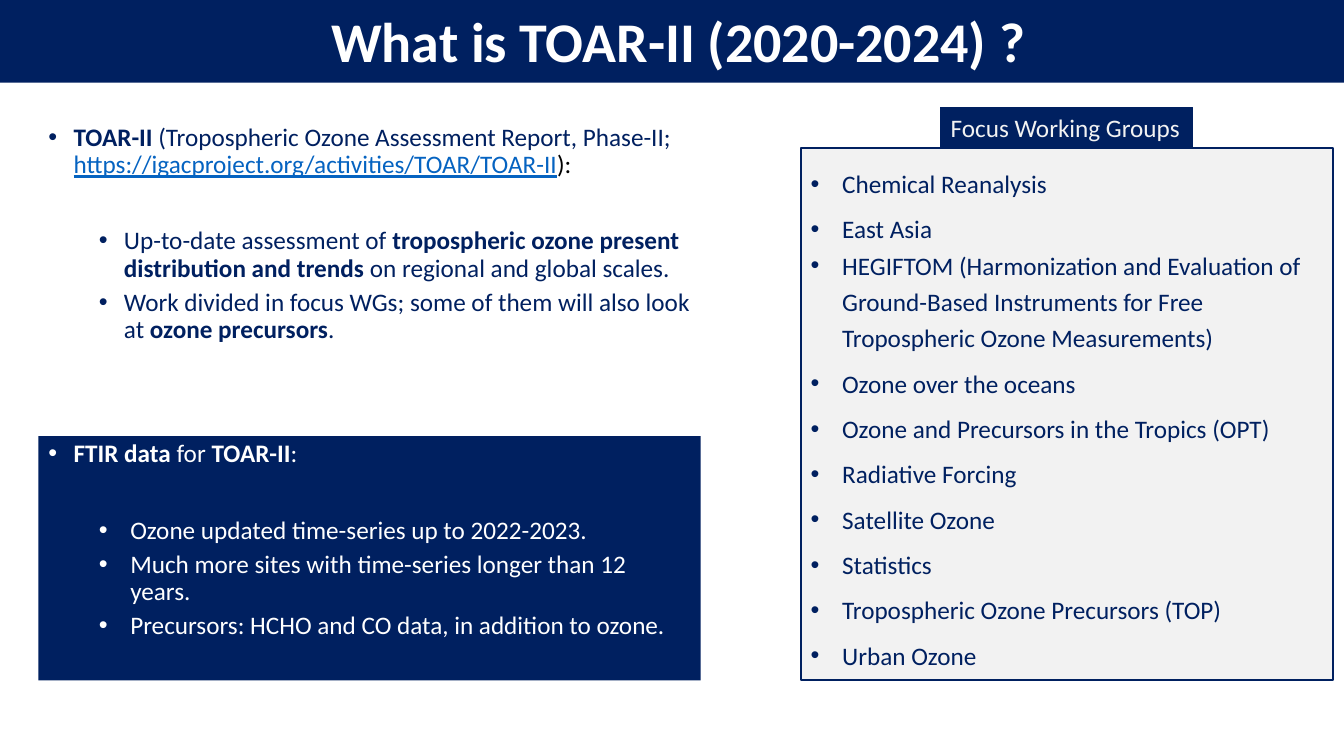
from dataclasses import dataclass

from lxml import etree
from pptx import Presentation
from pptx.dml.color import RGBColor
from pptx.enum.shapes import MSO_SHAPE
from pptx.enum.text import MSO_ANCHOR, PP_ALIGN
from pptx.oxml.ns import qn
from pptx.util import Pt

RECTANGLE = MSO_SHAPE.RECTANGLE
TOP, MIDDLE = MSO_ANCHOR.TOP, MSO_ANCHOR.MIDDLE
LEFT, CENTER = PP_ALIGN.LEFT, PP_ALIGN.CENTER


@dataclass(frozen=True)
class Theme:
    font: str = "Calibri"
    title_size: int = 40
    body_size: int = 18
    navy: str = "002060"
    white: str = "FFFFFF"
    grey: str = "F2F2F2"
    link: str = "0563C1"
    black: str = "000000"


THEME = Theme()
BOLD = {"bold": True}

TOAR_HEADING = [
    ("TOAR-II ", BOLD),
    "(Tropospheric Ozone Assessment Report, Phase-II; ",
    ("https://igacproject.org/activities/TOAR/TOAR-II",
     {"color": THEME.link, "underline": True}),
    ("):", {"color": THEME.black}),
]
TOAR_POINTS = [
    ["Up-to-date assessment of ",
     ("tropospheric ozone present distribution and trends", BOLD),
     " on regional and global scales."],
    ["Work divided in focus WGs; some of them will also look at ",
     ("ozone precursors", BOLD), "."],
]
FTIR_HEADING = [("FTIR data ", BOLD), "for ", ("TOAR-II", BOLD), ":"]
FTIR_POINTS = [
    ["Ozone updated time-series up to 2022-2023."],
    ["Much more sites with time-series longer than 12 years."],
    ["Precursors: HCHO and CO data, in addition to ozone."],
]
LONG_GROUP = ("HEGIFTOM (Harmonization and Evaluation of Ground-Based "
              "Instruments for Free Tropospheric Ozone Measurements)")
WORKING_GROUPS = [
    "Chemical Reanalysis", "East Asia", LONG_GROUP, "Ozone over the oceans",
    "Ozone and Precursors in the Tropics (OPT)", "Radiative Forcing",
    "Satellite Ozone", "Statistics", "Tropospheric Ozone Precursors (TOP)",
    "Urban Ozone",
]


def add_box(slide, left, top, width, height, fill, line=None, line_width=1.5,
            anchor=TOP, wrap=True):
    """Add a plain rectangle and return its text frame."""
    shape = slide.shapes.add_shape(
        RECTANGLE, Pt(left), Pt(top), Pt(width), Pt(height))
    shape.shadow.inherit = False
    shape.fill.solid()
    shape.fill.fore_color.rgb = RGBColor.from_string(fill)
    if line:
        shape.line.color.rgb = RGBColor.from_string(line)
        shape.line.width = Pt(line_width)
    else:
        shape.line.fill.background()
    frame = shape.text_frame
    frame.word_wrap = wrap
    frame.vertical_anchor = anchor
    return frame


def add_text_area(slide, left, top, width, height):
    """Add a wrapping text box and return its text frame."""
    frame = slide.shapes.add_textbox(
        Pt(left), Pt(top), Pt(width), Pt(height)).text_frame
    frame.word_wrap = True
    return frame


def add_bullet(paragraph, indent, hanging):
    properties = paragraph._p.get_or_add_pPr()
    properties.set("marL", str(Pt(indent)))
    properties.set("indent", str(-Pt(hanging)))
    etree.SubElement(properties, qn("a:buFont"), typeface="Arial")
    etree.SubElement(properties, qn("a:buChar"), char="•")


def write(frame, parts, color, size=THEME.body_size, bold=False, align=LEFT,
          level=0, spacing=1.0, before=0, indent=0, hanging=0):
    """Write one paragraph; a part is a string or (string, format changes)."""
    first = frame.paragraphs[0]
    paragraph = frame.add_paragraph() if first.runs else first
    paragraph.alignment = align
    paragraph.level = level
    paragraph.line_spacing = spacing
    paragraph.space_before = Pt(before)
    if hanging:
        add_bullet(paragraph, indent, hanging)
    for part in parts:
        text, changes = (part, {}) if isinstance(part, str) else part
        run = paragraph.add_run()
        run.text = text
        run.font.name = THEME.font
        run.font.size = Pt(size)
        run.font.bold = changes.get("bold", bold)
        run.font.underline = changes.get("underline", False)
        run.font.color.rgb = RGBColor.from_string(changes.get("color", color))


def write_outline(frame, heading, points, color, indent, hanging):
    """Write a bulleted heading with a gap and bulleted points below it."""
    write(frame, heading, color, spacing=0.9, before=10, indent=18, hanging=18)
    for index, point in enumerate(points):
        write(frame, point, color, level=1, spacing=0.9,
              before=5 if index else 35, indent=indent, hanging=hanging)


def main():
    presentation = Presentation()
    presentation.slide_width, presentation.slide_height = Pt(960), Pt(540)
    slide = presentation.slides.add_slide(presentation.slide_layouts[6])

    groups = add_box(slide, 572, 106, 380, 380, THEME.grey, THEME.navy)
    for group in WORKING_GROUPS:
        write(groups, [group], THEME.navy, indent=22.5, hanging=22.5,
              spacing=1.2 if group == LONG_GROUP else 1.5)

    title = add_box(slide, 0, -2, 960, 61, THEME.navy, anchor=MIDDLE)
    write(title, [" What is TOAR-II (2020-2024) ?"], THEME.white,
          size=THEME.title_size, bold=True, align=CENTER)

    toar = add_text_area(slide, 27.5, 85.5, 473, 199.5)
    write_outline(toar, TOAR_HEADING, TOAR_POINTS, THEME.navy, 54, 18)

    ftir = add_box(slide, 27.5, 311.5, 473, 174.5, THEME.navy)
    write_outline(ftir, FTIR_HEADING, FTIR_POINTS, THEME.white, 58.5, 22.5)

    label = add_box(slide, 672, 76.5, 180, 29, THEME.navy, THEME.navy, 0.75,
                    wrap=False)
    write(label, ["Focus Working Groups"], THEME.grey)

    presentation.save("out.pptx")


if __name__ == "__main__":
    main()
